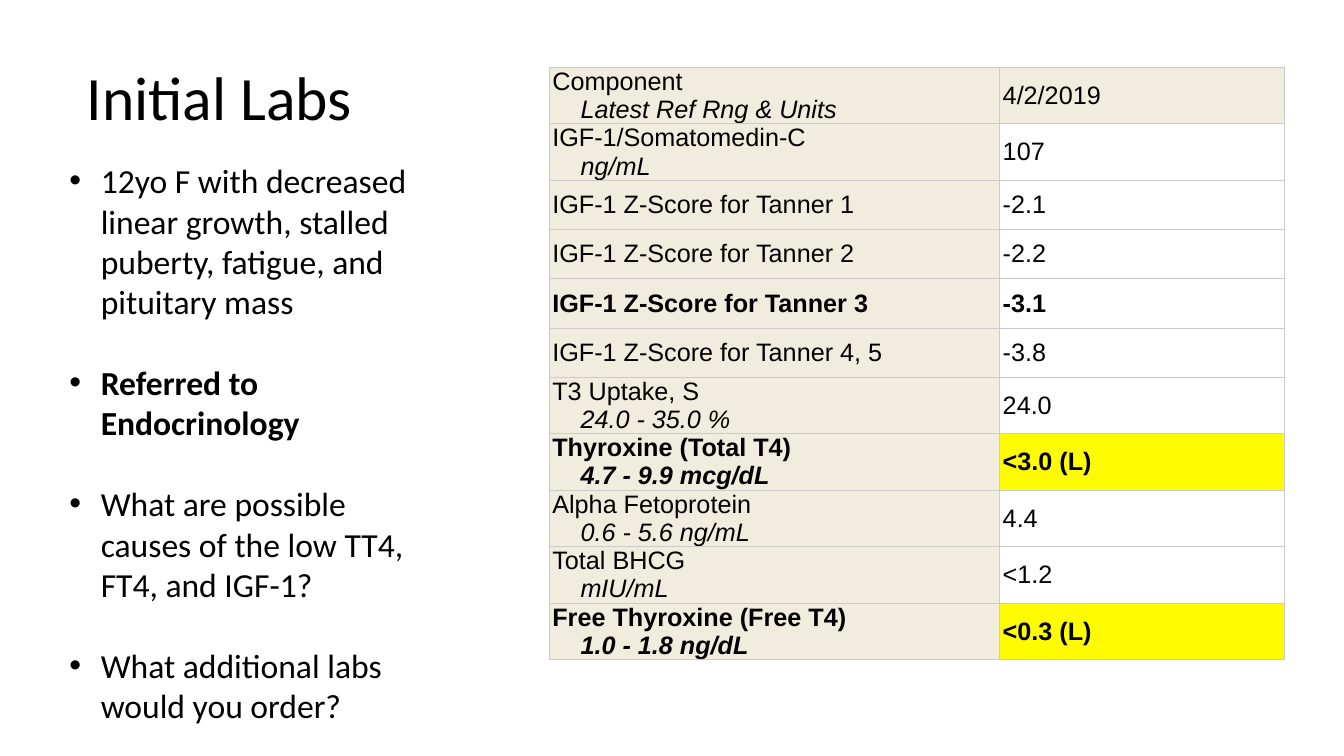
"""Build the slide of initial laboratory results."""
from dataclasses import dataclass

from lxml import etree
from pptx import Presentation
from pptx.dml.color import RGBColor
from pptx.enum.text import MSO_ANCHOR, MSO_AUTO_SIZE, PP_ALIGN
from pptx.oxml.ns import qn
from pptx.util import Cm, Pt

MIDDLE = MSO_ANCHOR.MIDDLE
LEFT = PP_ALIGN.LEFT
FIXED = MSO_AUTO_SIZE.NONE
GROW = MSO_AUTO_SIZE.SHAPE_TO_FIT_TEXT


@dataclass(frozen=True)
class Theme:
    text: RGBColor = RGBColor(0x00, 0x00, 0x00)
    label_fill: RGBColor = RGBColor(0xF0, 0xED, 0xDF)
    low_fill: RGBColor = RGBColor(0xFF, 0xFB, 0x00)
    border: str = "CBCBCB"
    border_width: float = 0.75
    text_font: str = "Calibri"
    table_font: str = "Arial"
    title_size: int = 44
    bullet_size: int = 24
    table_size: int = 18


class SlideBuilder:
    def __init__(self, slide, theme):
        self.slide = slide
        self.theme = theme

    def style(self, paragraph, font_name, size, bold=False, italic=False):
        for run in paragraph.runs:
            font = run.font
            font.name, font.size = font_name, Pt(size)
            font.bold, font.italic = bold, italic
            font.color.rgb = self.theme.text

    def title(self, wording, left, top, width, height):
        heading = self.slide.shapes.title
        heading.left, heading.top = Cm(left), Cm(top)
        heading.width, heading.height = Cm(width), Cm(height)
        frame = heading.text_frame
        frame.text = wording
        frame.auto_size = FIXED
        frame.vertical_anchor = MIDDLE
        paragraph = frame.paragraphs[0]
        paragraph.alignment = LEFT
        paragraph.line_spacing = 0.9
        self.style(paragraph, self.theme.text_font, self.theme.title_size)

    def bullets(self, points, left, top, width, height, gap):
        box = self.slide.shapes.add_textbox(Cm(left), Cm(top), Cm(width), Cm(height))
        frame = box.text_frame
        frame.word_wrap = True
        frame.auto_size = GROW
        for index, (wording, bold) in enumerate(points):
            paragraph = frame.add_paragraph() if index else frame.paragraphs[0]
            paragraph.text = wording
            properties = paragraph._p.get_or_add_pPr()
            properties.set("marL", str(Cm(0.79)))
            properties.set("indent", str(-Cm(0.79)))
            etree.SubElement(properties, qn("a:buFont"), typeface="Arial")
            etree.SubElement(properties, qn("a:buChar"), char="•")
            if index:
                paragraph.space_before = Pt(gap)
            self.style(paragraph, self.theme.text_font, self.theme.bullet_size, bold)

    def table(self, rows, left, top, column_widths, row_height):
        frame = self.slide.shapes.add_table(
            len(rows), len(column_widths), Cm(left), Cm(top),
            Cm(sum(column_widths)), Cm(row_height * len(rows)))
        grid = frame.table
        grid.first_row = grid.horz_banding = False
        for column, width in zip(grid.columns, column_widths):
            column.width = Cm(width)
        for index, (component, reference, result, bold, low) in enumerate(rows):
            grid.rows[index].height = Cm(row_height)
            result_fill = self.theme.low_fill if low else None
            if index == 0:
                result_fill = self.theme.label_fill
            self.cell(grid.cell(index, 0), component, reference, bold, self.theme.label_fill)
            self.cell(grid.cell(index, 1), result, "", bold, result_fill)

    def cell(self, cell, wording, reference, bold, fill):
        cell.margin_left = cell.margin_right = Cm(0.08)
        cell.margin_top = cell.margin_bottom = 0
        cell.vertical_anchor = MIDDLE
        self.borders(cell)
        if fill is None:
            cell.fill.background()
        else:
            cell.fill.solid()
            cell.fill.fore_color.rgb = fill
        frame = cell.text_frame
        frame.text = wording
        self.style(frame.paragraphs[0], self.theme.table_font, self.theme.table_size, bold)
        if reference:
            paragraph = frame.add_paragraph()
            paragraph.text = reference
            paragraph._p.get_or_add_pPr().set("marL", str(Cm(0.71)))
            self.style(paragraph, self.theme.table_font, self.theme.table_size, bold, True)

    def borders(self, cell):
        properties = cell._tc.get_or_add_tcPr()
        for side in ("a:lnL", "a:lnR", "a:lnT", "a:lnB"):
            line = etree.SubElement(properties, qn(side), w=str(Pt(self.theme.border_width)))
            fill = etree.SubElement(line, qn("a:solidFill"))
            etree.SubElement(fill, qn("a:srgbClr"), val=self.theme.border)


POINTS = [
    ("12yo F with decreased linear growth, stalled puberty, fatigue, and pituitary mass", False),
    ("Referred to Endocrinology", True),
    ("What are possible causes of the low TT4, FT4, and IGF-1?", False),
    ("What additional labs would you order?", False),
]

LABS = [
    ("Component", "Latest Ref Rng & Units", "4/2/2019", False, False),
    ("IGF-1/Somatomedin-C", "ng/mL", "107", False, False),
    ("IGF-1 Z-Score for Tanner 1", "", "-2.1", False, False),
    ("IGF-1 Z-Score for Tanner 2", "", "-2.2", False, False),
    ("IGF-1 Z-Score for Tanner 3", "", "-3.1", True, False),
    ("IGF-1 Z-Score for Tanner 4, 5", "", "-3.8", False, False),
    ("T3 Uptake, S", "24.0 - 35.0 %", "24.0", False, False),
    ("Thyroxine (Total T4)", "4.7 - 9.9 mcg/dL", "<3.0 (L)", True, True),
    ("Alpha Fetoprotein", "0.6 - 5.6 ng/mL", "4.4", False, False),
    ("Total BHCG", "mIU/mL", "<1.2", False, False),
    ("Free Thyroxine (Free T4)", "1.0 - 1.8 ng/dL", "<0.3 (L)", True, True),
]


def main():
    presentation = Presentation()
    presentation.slide_width, presentation.slide_height = Cm(33.87), Cm(19.05)
    slide = presentation.slides.add_slide(presentation.slide_layouts[5])
    builder = SlideBuilder(slide, Theme())
    builder.title("Initial Labs", 1.93, 0.69, 7.47, 3.68)
    builder.table(LABS, 13.84, 1.7, (11.35, 7.19), 1.24)
    builder.bullets(POINTS, 1.5, 3.91, 9.73, 16.15, gap=29)
    presentation.save("out.pptx")


if __name__ == "__main__":
    main()
